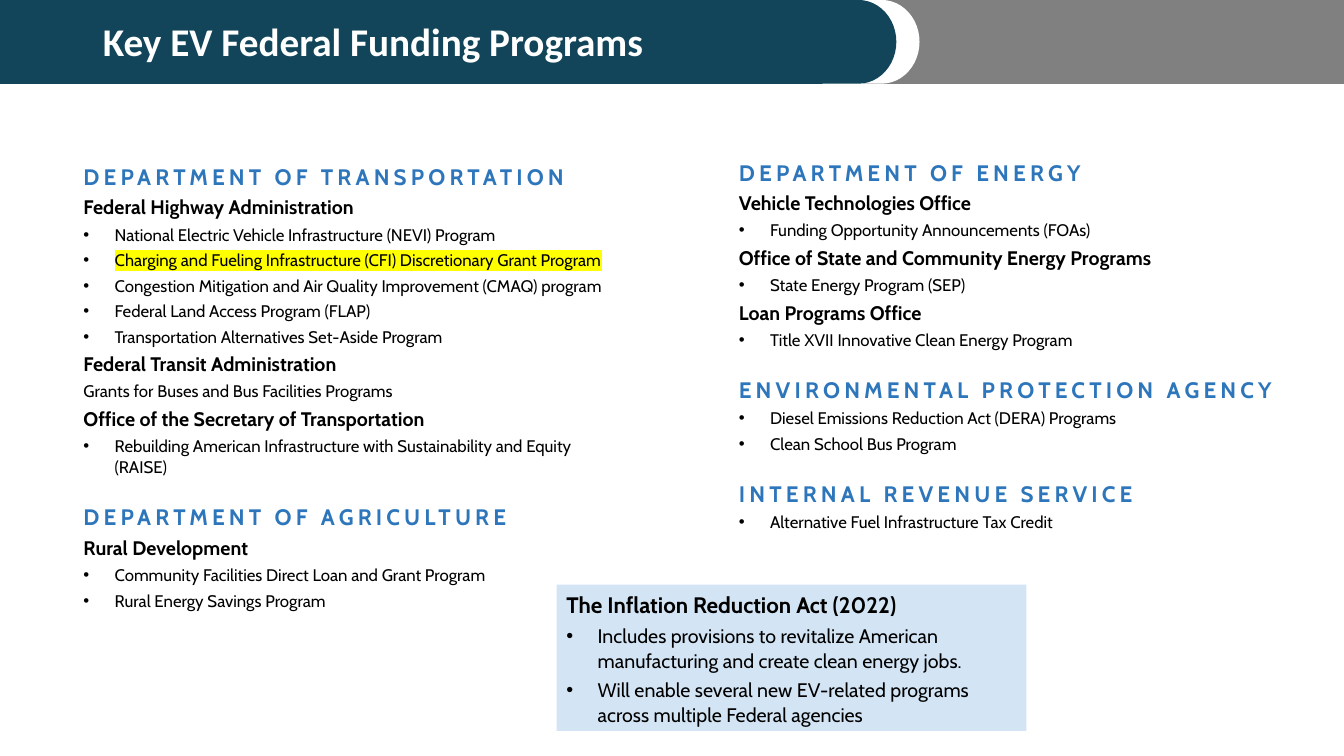
from lxml import etree
from pptx import Presentation
from pptx.dml.color import RGBColor
from pptx.enum.shapes import MSO_SHAPE
from pptx.enum.text import MSO_ANCHOR, MSO_AUTO_SIZE, PP_ALIGN
from pptx.oxml.ns import qn
from pptx.util import Inches, Pt

RECT, DELAY = MSO_SHAPE.RECTANGLE, MSO_SHAPE.FLOWCHART_DELAY
TOP, BOTTOM = MSO_ANCHOR.TOP, MSO_ANCHOR.BOTTOM
LEFT, NO_FIT = PP_ALIGN.LEFT, MSO_AUTO_SIZE.NONE

TEAL, GRAY, WHITE, BLACK = "124559", "808080", "FFFFFF", "000000"
BLUE, PALE_BLUE, YELLOW = "2E76BB", "D3E5F5", "FFFF00"
SECTION_GAP = 14.5

# kind: size, bold, colour, bulleted
STYLES = {
    "department": (16, True, BLUE, False),
    "office": (14, True, BLACK, False),
    "program": (12, False, BLACK, True),
    "marked": (12, False, BLACK, True),
    "plain": (12, False, BLACK, False),
    "act": (16, True, BLACK, False),
    "provision": (14, False, BLACK, True),
}

LEFT_PROGRAMS = [
    ("department", "DEPARTMENT OF TRANSPORTATION"),
    ("office", "Federal Highway Administration"),
    ("program", "National Electric Vehicle Infrastructure (NEVI) Program"),
    ("marked", "Charging and Fueling Infrastructure (CFI) Discretionary Grant Program"),
    ("program", "Congestion Mitigation and Air Quality Improvement (CMAQ) program"),
    ("program", "Federal Land Access Program (FLAP)"),
    ("program", "Transportation Alternatives Set-Aside Program"),
    ("office", "Federal Transit Administration"),
    ("plain", "Grants for Buses and Bus Facilities Programs"),
    ("office", "Office of the Secretary of Transportation"),
    ("program", "Rebuilding American Infrastructure with Sustainability and Equity (RAISE)"),
    ("department", "DEPARTMENT OF AGRICULTURE"),
    ("office", "Rural Development"),
    ("program", "Community Facilities Direct Loan and Grant Program"),
    ("program", "Rural Energy Savings Program"),
]
RIGHT_PROGRAMS = [
    ("department", "DEPARTMENT OF ENERGY"),
    ("office", "Vehicle Technologies Office"),
    ("program", "Funding Opportunity Announcements (FOAs)"),
    ("office", "Office of State and Community Energy Programs"),
    ("program", "State Energy Program (SEP)"),
    ("office", "Loan Programs Office"),
    ("program", "Title XVII Innovative Clean Energy Program"),
    ("department", "ENVIRONMENTAL PROTECTION AGENCY"),
    ("program", "Diesel Emissions Reduction Act (DERA) Programs"),
    ("program", "Clean School Bus Program"),
    ("department", "INTERNAL REVENUE SERVICE"),
    ("program", "Alternative Fuel Infrastructure Tax Credit"),
]
INFLATION_ACT = [
    ("act", "The Inflation Reduction Act (2022)"),
    ("provision", "Includes provisions to revitalize American manufacturing and create clean energy jobs."),
    ("provision", "Will enable several new EV-related programs across multiple Federal agencies"),
]


def rgb(color):
    return RGBColor.from_string(color)


def add_block(s, preset, box, fill, line=None):
    sp = s.shapes.add_shape(preset, *map(Inches, box))
    sp.shadow.inherit = False
    sp.fill.solid()
    sp.fill.fore_color.rgb = rgb(fill)
    if line:
        sp.line.color.rgb = rgb(line)
        sp.line.width = Pt(1.5)
    else:
        sp.line.fill.background()
    return sp


def add_bullet(p):
    pPr = p._p.get_or_add_pPr()
    pPr.set("marL", str(Inches(0.31)))
    pPr.set("indent", str(-Inches(0.31)))
    etree.SubElement(pPr, qn("a:buFont")).set("typeface", "Arial")
    etree.SubElement(pPr, qn("a:buChar")).set("char", "•")


def highlight(r, color):
    """Mark a run that already has its text colour."""
    mark = etree.Element(qn("a:highlight"))
    etree.SubElement(mark, qn("a:srgbClr")).set("val", color)
    r._r.rPr.find(qn("a:solidFill")).addnext(mark)


def write_programs(tf, items):
    tf.word_wrap = True
    tf.vertical_anchor = TOP
    for i, (kind, text) in enumerate(items):
        size, bold, color, bulleted = STYLES[kind]
        p = tf.paragraphs[0] if i == 0 else tf.add_paragraph()
        p.text = text
        if bulleted:
            add_bullet(p)
        p.alignment = LEFT
        p.line_spacing = 1.06
        p.space_after = Pt(3)
        if i and kind == "department":
            p.space_before = Pt(SECTION_GAP)
        r = p.runs[0]
        r.font.name = "Cabin"
        r.font.size = Pt(size)
        r.font.bold = bold
        r.font.color.rgb = rgb(color)
        if kind == "department":
            r._r.rPr.set("spc", "300")
        if kind == "marked":
            highlight(r, YELLOW)


def add_header(s, box, title):
    """Teal band with a rounded end, on a gray band, carrying the title."""
    x, y, w, h = box
    band, cap, step = 8.15, 0.73, 0.23
    gray_x = x + band + 0.42
    add_block(s, RECT, (gray_x, y, x + w - gray_x, h), GRAY, GRAY)
    add_block(s, DELAY, (x + band + step, y, cap, h), WHITE, WHITE)
    add_block(s, DELAY, (x + band, y, cap, h), TEAL, TEAL)
    add_block(s, RECT, (x, y, band, h), TEAL, TEAL)

    sp = s.shapes.title
    s.shapes._spTree.append(sp._element)  # bring in front of the bands
    sp.left, sp.top = Inches(x + 0.92), Inches(y + 0.15)
    sp.width, sp.height = Inches(7.46), Inches(0.53)
    tf = sp.text_frame
    tf.text = title
    tf.auto_size = NO_FIT
    tf.vertical_anchor = BOTTOM
    p = tf.paragraphs[0]
    p.alignment = LEFT
    p.line_spacing = 1.2
    font = p.runs[0].font
    font.name, font.size, font.bold = "Calibri", Pt(28), True
    font.color.rgb = rgb(WHITE)


def add_left_column(s, box):
    tf = add_block(s, RECT, box, WHITE).text_frame
    tf.margin_top = tf.margin_bottom = Inches(0.1)
    write_programs(tf, LEFT_PROGRAMS)


def add_right_column(s, box):
    write_programs(s.shapes.add_textbox(*map(Inches, box)).text_frame, RIGHT_PROGRAMS)


def add_act_card(s, box):
    write_programs(add_block(s, RECT, box, PALE_BLUE).text_frame, INFLATION_ACT)


def main():
    prs = Presentation()
    prs.slide_width, prs.slide_height = Inches(13.33), Inches(7.5)
    s = prs.slides.add_slide(prs.slide_layouts[5])
    add_header(s, (0, 0.01, 13.33, 0.81), "Key EV Federal Funding Programs")
    add_left_column(s, (0.73, 1.5, 5.56, 5.18))
    add_right_column(s, (7.23, 1.51, 5.89, 3.84))
    add_act_card(s, (5.52, 5.8, 4.66, 1.45))
    prs.save("out.pptx")


if __name__ == "__main__":
    main()
